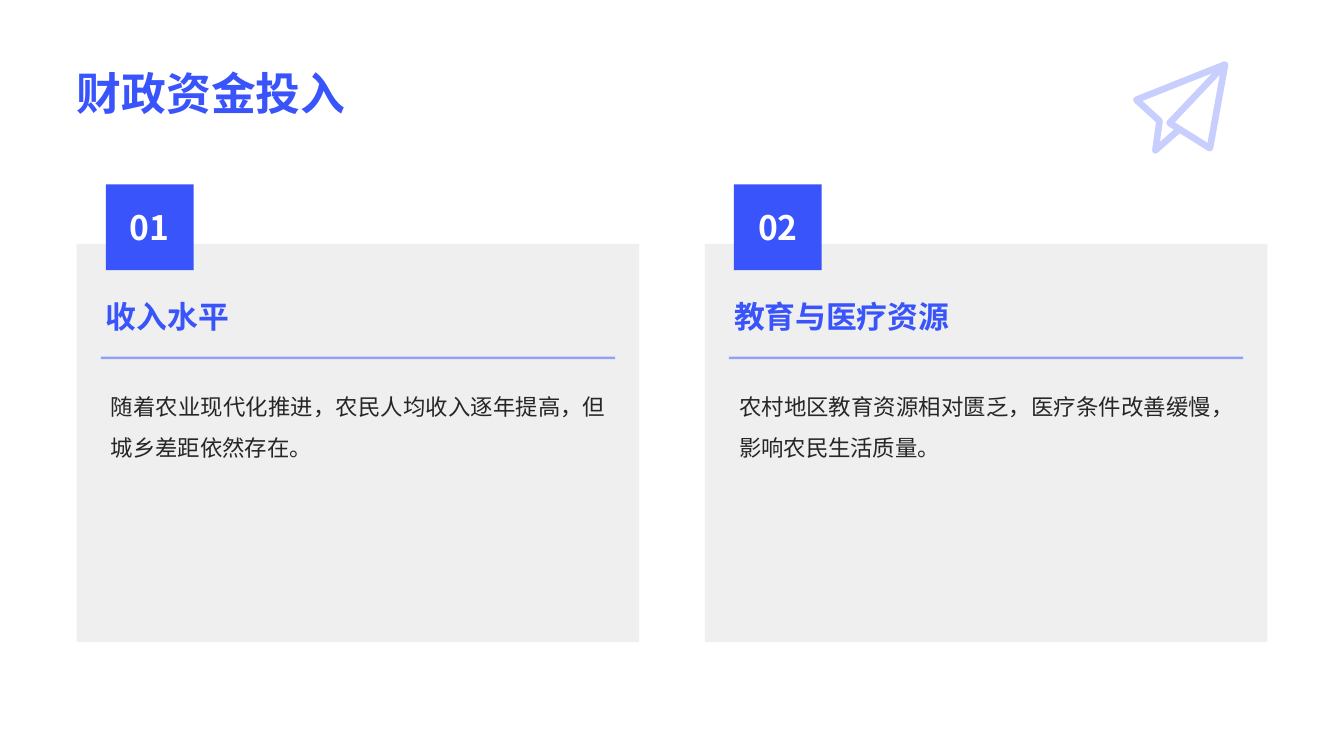
from lxml.etree import SubElement
from pptx import Presentation
from pptx.dml.color import RGBColor
from pptx.enum.shapes import MSO_CONNECTOR as Link, MSO_SHAPE as Form
from pptx.enum.text import MSO_ANCHOR as Anchor, PP_ALIGN as Align
from pptx.oxml.ns import qn
from pptx.util import Pt

PX = 9144
INK = {"blue": "3954FB", "pale": "8898FD", "gray": "999999",
       "dark": "262626", "white": "FFFFFF"}
SANS = "Noto Sans CJK SC"
CARDS = [
    ("01", "收入水平", "随着农业现代化推进，农民人均收入逐年提高，但城乡差距依然存在。"),
    ("02", "教育与医疗资源", "农村地区教育资源相对匮乏，医疗条件改善缓慢，影响农民生活质量。"),
]
PLANE = [(1214, 65), (1160, 122), (1200, 147), (1215, 64), (1127, 99),
         (1150, 120), (1146, 149), (1170, 128)]


class Deck:
    """Holds the style and the current slide, and draws each kind of element."""

    def __init__(self, wide, high):
        self.show = Presentation()
        self.show.slide_width, self.show.slide_height = wide * PX, high * PX
        self.slide = self.show.slides.add_slide(self.show.slide_layouts[6])
        self.shapes = self.slide.shapes

    def color(self, name):
        return RGBColor.from_string(INK[name])

    def fade(self, shape, part):
        for tint in shape._element.spPr.iter(qn("a:srgbClr")):
            SubElement(tint, qn("a:alpha"), val=str(part * 1000))

    def stroke(self, shape, ink, width, part):
        shape.line.color.rgb = self.color(ink)
        shape.line.width = Pt(width)
        self.fade(shape, part)

    def label(self, shape, text, size, ink, name=SANS, bold=False,
              anchor=Anchor.TOP, align=Align.LEFT, space=1.0, wrap=True):
        frame = shape.text_frame
        look = {"margin_left": 0, "margin_right": 0, "margin_top": 0,
                "margin_bottom": 0, "word_wrap": wrap, "vertical_anchor": anchor}
        for key, value in look.items():
            setattr(frame, key, value)
        para = frame.paragraphs[0]
        para.alignment, para.line_spacing = align, space
        run = para.add_run()
        run.text = text
        for key, value in {"size": Pt(size), "bold": bold, "name": name}.items():
            setattr(run.font, key, value)
        run.font.color.rgb = self.color(ink)
        SubElement(run._r.get_or_add_rPr(), qn("a:ea"), typeface=SANS)

    def text(self, box, text, size, ink, **look):
        shape = self.shapes.add_textbox(*(n * PX for n in box))
        self.label(shape, text, size, ink, **look)

    def block(self, box, ink, part=100):
        shape = self.shapes.add_shape(Form.ROUNDED_RECTANGLE, *(n * PX for n in box))
        shape.adjustments[0] = 0
        shape.shadow.inherit = False
        shape.fill.solid()
        shape.fill.fore_color.rgb = self.color(ink)
        shape.line.fill.background()
        if part < 100:
            self.fade(shape, part)
        return shape

    def rule(self, left, top, wide):
        ends = (left, top, left + wide, top)
        line = self.shapes.add_connector(Link.STRAIGHT, *(n * PX for n in ends))
        self.stroke(line, "blue", 1.75, 50)
        SubElement(line._element.spPr, qn("a:effectLst"))

    def trace(self, points, ink, width, part):
        pen = self.shapes.build_freeform(*points[0], scale=PX)
        pen.add_line_segments(points[1:], close=False)
        shape = pen.convert_to_shape()
        shape.shadow.inherit = False
        shape.fill.background()
        self.stroke(shape, ink, width, part)
        edge = shape._element.spPr.find(qn("a:ln"))
        edge.set("cap", "rnd")
        SubElement(edge, qn("a:round"))

    def card(self, left, mark, head, body):
        self.block((left, 242, 558, 395), "gray", 15)
        self.text((left + 34, 377, 491, 240), body, 16, "dark",
                  align=Align.JUSTIFY, space=1.5)
        badge = self.block((left + 29, 183, 87, 85), "blue")
        self.label(badge, mark, 24, "white", bold=True, anchor=Anchor.MIDDLE,
                   align=Align.CENTER, wrap=False)
        self.rule(left + 24, 355, 510)
        self.text((left + 29, 290, 491, 48), head, 22, "blue", bold=True,
                  anchor=Anchor.MIDDLE)


def main():
    deck = Deck(1333, 750)
    deck.trace(PLANE, "pale", 4.75, 46)
    deck.text((76, 39, 1181, 79), "财政资金投入", 32, "blue", name="Arial",
              bold=True, anchor=Anchor.BOTTOM)
    for i, card in enumerate(CARDS):
        deck.card(76 + i * 623, *card)
    deck.show.save("out.pptx")


if __name__ == "__main__":
    main()
